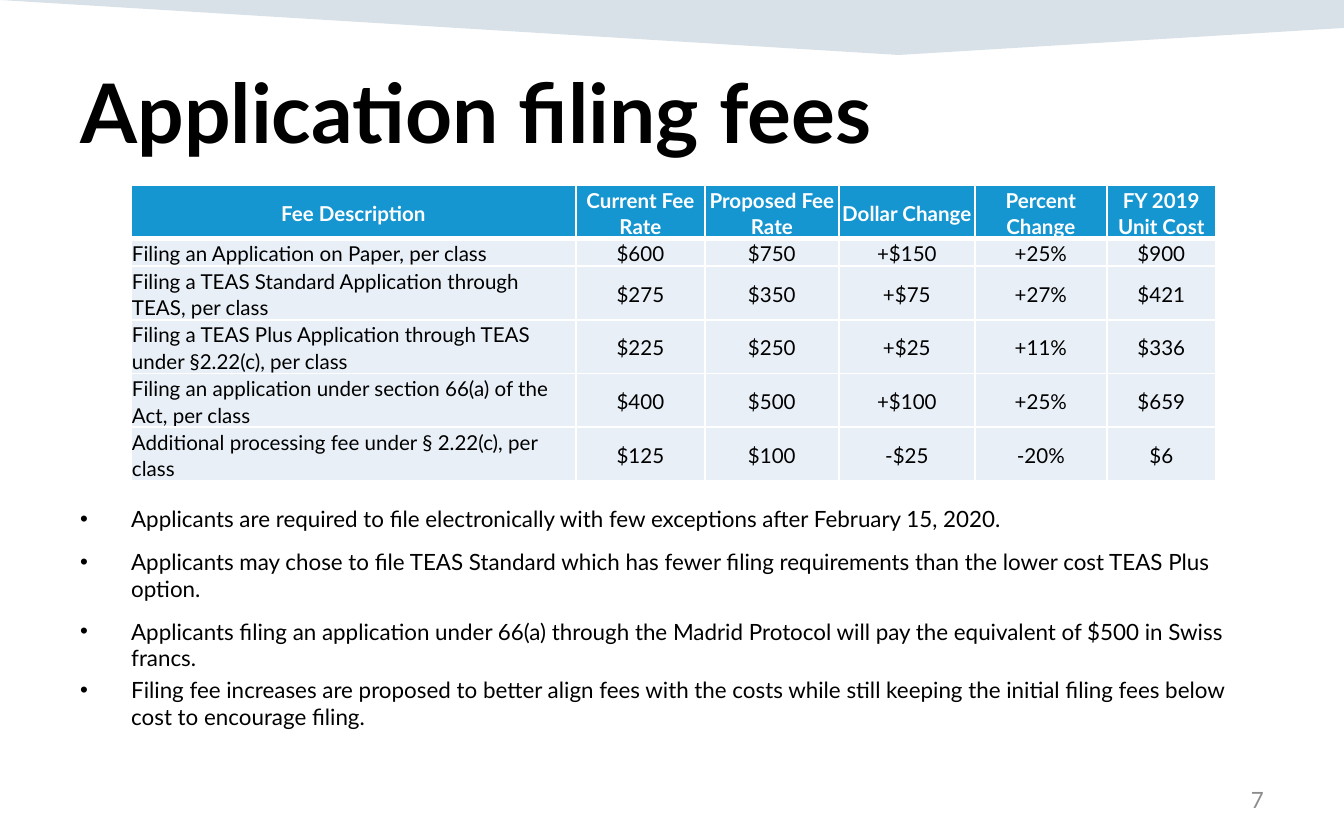
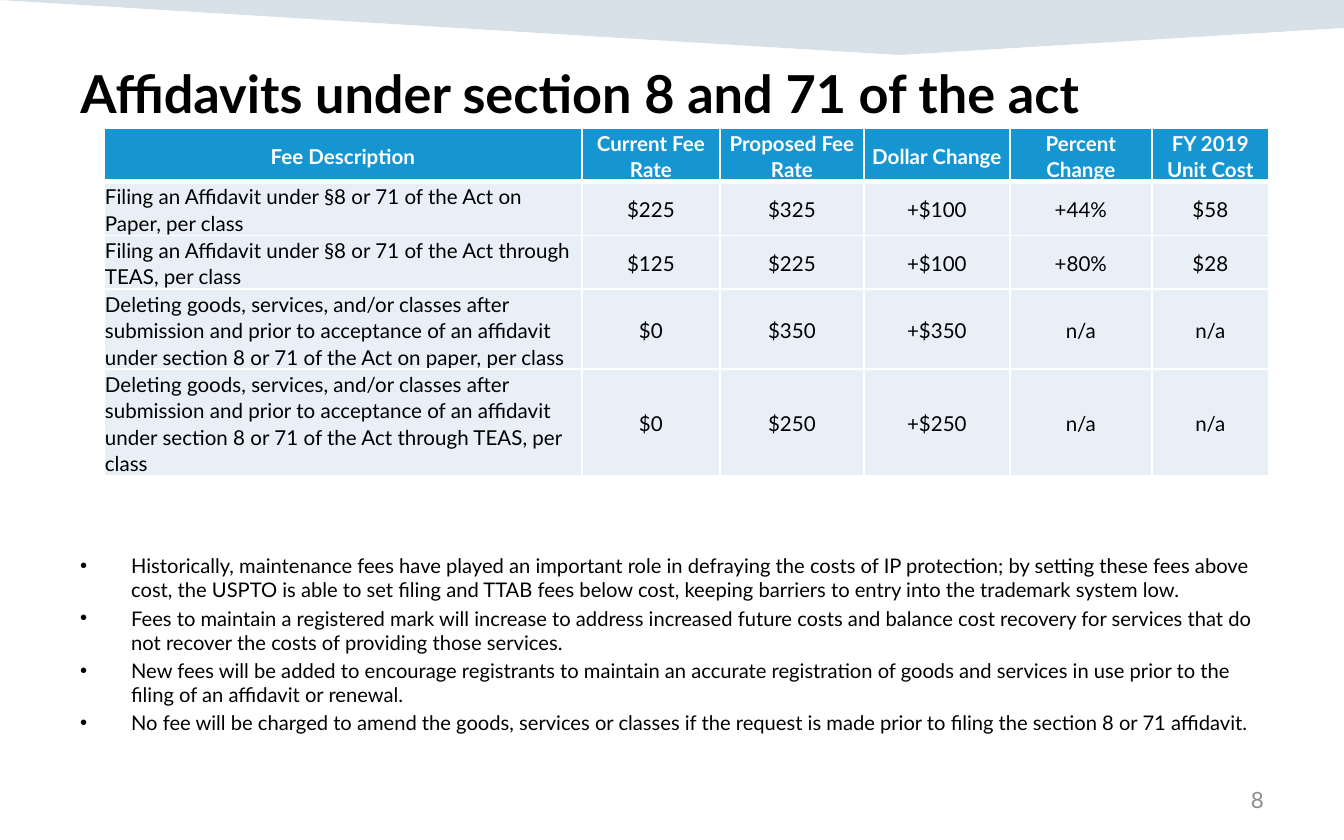
from dataclasses import dataclass

from pptx import Presentation
from pptx.dml.color import RGBColor
from pptx.enum.text import MSO_ANCHOR, MSO_AUTO_SIZE, PP_ALIGN
from pptx.oxml.ns import qn
from pptx.util import Pt
from lxml.etree import SubElement

EMU_PER_PX = 914400 / 134.4


@dataclass(frozen=True)
class Theme:
    font: str = "Lato"
    ink: str = "000000"
    white: str = "FFFFFF"
    navy: str = "003865"
    header: str = "1596D1"
    row: str = "E8EFF7"
    grey: str = "8C8C8C"
    table_size: float = 11
    number_size: float = 12
    band_opacity: int = 15000


THEME = Theme()
TITLE_BOX = (67, 55, 1210, 130)
NUMBER_BOX = (964, 778, 313, 44)
BAND_POINTS = [(1344, 0), (1344, 28), (899, 55)]
BULLET_INDENT = 51
FEE_COLUMNS = [
    "Fee Description", "Current Fee Rate", "Proposed Fee Rate",
    "Dollar Change", "Percent Change", "FY 2019 Unit Cost",
]

FILING = {
    "number": 7,
    "title": "Application filing fees",
    "title_size": 44,
    "table_at": (131, 185),
    "columns": [445, 129, 134, 136, 132, 109],
    "rows": [51, 27, 51, 51, 51, 51],
    "fees": [
        ["Filing an Application on Paper, per class",
         "$600", "$750", "+$150", "+25%", "$900"],
        ["Filing a TEAS Standard Application through TEAS, per class",
         "$275", "$350", "+$75", "+27%", "$421"],
        ["Filing a TEAS Plus Application through TEAS under §2.22(c), per class",
         "$225", "$250", "+$25", "+11%", "$336"],
        ["Filing an application under section 66(a) of the Act, per class",
         "$400", "$500", "+$100", "+25%", "$659"],
        ["Additional processing fee under § 2.22(c), per class",
         "$125", "$100", "-$25", "-20%", "$6"],
    ],
    "notes_box": (67, 499, 1210, 242),
    "notes_size": 12,
    "notes": [
        ("Applicants are required to file electronically with few exceptions "
         "after February 15, 2020.", 6),
        ("Applicants may chose to file TEAS Standard which has fewer filing "
         "requirements than the lower cost TEAS Plus option.", 6),
        ("Applicants filing an application under 66(a) through the Madrid "
         "Protocol will pay the equivalent of $500 in Swiss francs.", 0),
        ("Filing fee increases are proposed to better align fees with the costs "
         "while still keeping the initial filing fees below cost to encourage "
         "filing.", 0),
    ],
}

AFFIDAVITS = {
    "number": 8,
    "title": "Affidavits under section 8 and 71 of the act",
    "title_size": 28,
    "table_at": (104, 128),
    "columns": [478, 138, 144, 146, 142, 117],
    "rows": [48, 48, 48, 74, 98],
    "fees": [
        ["Filing an Affidavit under §8 or 71 of the Act on Paper, per class",
         "$225", "$325", "+$100", "+44%", "$58"],
        ["Filing an Affidavit under §8 or 71 of the Act through TEAS, per class",
         "$125", "$225", "+$100", "+80%", "$28"],
        ["Deleting goods, services, and/or classes after submission and prior to "
         "acceptance of an affidavit under section 8 or 71 of the Act on paper, "
         "per class", "$0", "$350", "+$350", "n/a", "n/a"],
        ["Deleting goods, services, and/or classes after submission and prior to "
         "acceptance of an affidavit under section 8 or 71 of the Act through "
         "TEAS, per class", "$0", "$250", "+$250", "n/a", "n/a"],
    ],
    "notes_box": (67, 547, 1210, 195),
    "notes_size": 10.8,
    "notes": [
        ("Historically, maintenance fees have played an important role in "
         "defraying the costs of IP protection; by setting these fees above "
         "cost, the USPTO is able to set filing and TTAB fees below cost, "
         "keeping barriers to entry into the trademark system low.", 0),
        ("Fees to maintain a registered mark will increase to address increased "
         "future costs and balance cost recovery for services that do not "
         "recover the costs of providing those services.", 0),
        ("New fees will be added to encourage registrants to maintain an "
         "accurate registration of goods and services in use prior to the "
         "filing of an affidavit or renewal.", 0),
        ("No fee will be charged to amend the goods, services or classes if the "
         "request is made prior to filing the section 8 or 71 affidavit.", 0),
    ],
}


def px(length):
    return round(length * EMU_PER_PX)


def place(*lengths):
    return [px(length) for length in lengths]


def set_values(target, values):
    for name, value in values.items():
        setattr(target, name, value)


def write(para, text, size, color, bold=False, **layout):
    set_values(para, layout)
    span = para.add_run()
    span.text = text
    set_values(span.font, {"name": THEME.font, "size": Pt(size), "bold": bold})
    span.font.color.rgb = RGBColor.from_string(color)


def add_band(page):
    builder = page.shapes.build_freeform(0, 0, scale=EMU_PER_PX)
    builder.add_line_segments(BAND_POINTS, close=True)
    band = builder.convert_to_shape()
    band.shadow.inherit = False
    band.line.fill.background()
    band.fill.solid()
    band.fill.fore_color.rgb = RGBColor.from_string(THEME.navy)
    color = next(band._element.spPr.iter(qn("a:srgbClr")))
    SubElement(color, qn("a:alpha"), val=str(THEME.band_opacity))


def add_title(page, text, size):
    title = page.shapes.title
    names = ("left", "top", "width", "height")
    set_values(title, dict(zip(names, place(*TITLE_BOX))))
    set_values(title.text_frame, {
        "auto_size": MSO_AUTO_SIZE.NONE,
        "word_wrap": True,
        "vertical_anchor": MSO_ANCHOR.TOP,
    })
    write(title.text_frame.paragraphs[0], text, size, THEME.ink, True,
          alignment=PP_ALIGN.LEFT)


def add_text_box(page, bounds, anchor):
    box = page.shapes.add_textbox(*place(*bounds))
    set_values(box.text_frame, {"word_wrap": True, "vertical_anchor": anchor})
    return box.text_frame


def add_bullet(para):
    properties = para._p.get_or_add_pPr()
    properties.set("marL", str(px(BULLET_INDENT)))
    properties.set("indent", str(-px(BULLET_INDENT)))
    SubElement(properties, qn("a:buFont"), typeface="Arial")
    SubElement(properties, qn("a:buChar"), char="•")


def add_notes(page, bounds, notes, size):
    frame = add_text_box(page, bounds, MSO_ANCHOR.TOP)
    for index, (text, gap) in enumerate(notes):
        para = frame.add_paragraph() if index else frame.paragraphs[0]
        add_bullet(para)
        write(para, text, size, THEME.ink,
              space_before=Pt(size * 0.2 if index else 0), space_after=Pt(gap))


def add_borders(cell, widths):
    properties = cell._tc.get_or_add_tcPr()
    for side, width in widths.items():
        line = SubElement(properties, qn(f"a:ln{side}"), w=str(Pt(width)))
        fill = SubElement(line, qn("a:solidFill"))
        SubElement(fill, qn("a:srgbClr"), val=THEME.white)


def fill_cell(cell, text, is_header, is_label):
    set_values(cell, {
        "vertical_anchor": MSO_ANCHOR.MIDDLE,
        "margin_left": px(1),
        "margin_right": px(1),
        "margin_top": px(1),
        "margin_bottom": 0,
    })
    add_borders(cell, {"L": 1, "R": 1, "T": 1, "B": 3} if is_header
                else {"L": 1, "R": 1, "B": 1})
    cell.fill.solid()
    cell.fill.fore_color.rgb = RGBColor.from_string(
        THEME.header if is_header else THEME.row)
    centred = is_header or not is_label
    write(cell.text_frame.paragraphs[0], text, THEME.table_size,
          THEME.white if is_header else THEME.ink, is_header,
          alignment=PP_ALIGN.CENTER if centred else PP_ALIGN.LEFT,
          line_spacing=1.07, space_after=Pt(8))


def add_fee_table(page, corner, widths, heights, fees):
    table = page.shapes.add_table(
        len(heights), len(widths),
        *place(*corner, sum(widths), sum(heights))).table
    table.horz_banding = False
    for column, width in zip(table.columns, widths):
        column.width = px(width)
    for row, height in zip(table.rows, heights):
        row.height = px(height)
    for row_index, values in enumerate([FEE_COLUMNS, *fees]):
        for column_index, text in enumerate(values):
            fill_cell(table.cell(row_index, column_index), text,
                      row_index == 0, column_index == 0)


def add_page_number(page, number):
    frame = add_text_box(page, NUMBER_BOX, MSO_ANCHOR.MIDDLE)
    write(frame.paragraphs[0], str(number), THEME.number_size, THEME.grey,
          alignment=PP_ALIGN.RIGHT)


def add_fee_page(deck, content):
    page = deck.slides.add_slide(deck.slide_layouts.get_by_name("Title Only"))
    add_band(page)
    add_title(page, content["title"], content["title_size"])
    add_notes(page, content["notes_box"], content["notes"], content["notes_size"])
    add_fee_table(page, content["table_at"], content["columns"],
                  content["rows"], content["fees"])
    add_page_number(page, content["number"])


def main():
    deck = Presentation()
    set_values(deck, {"slide_width": px(1344), "slide_height": px(840)})
    for content in (FILING, AFFIDAVITS):
        add_fee_page(deck, content)
    deck.save("out.pptx")


if __name__ == "__main__":
    main()
